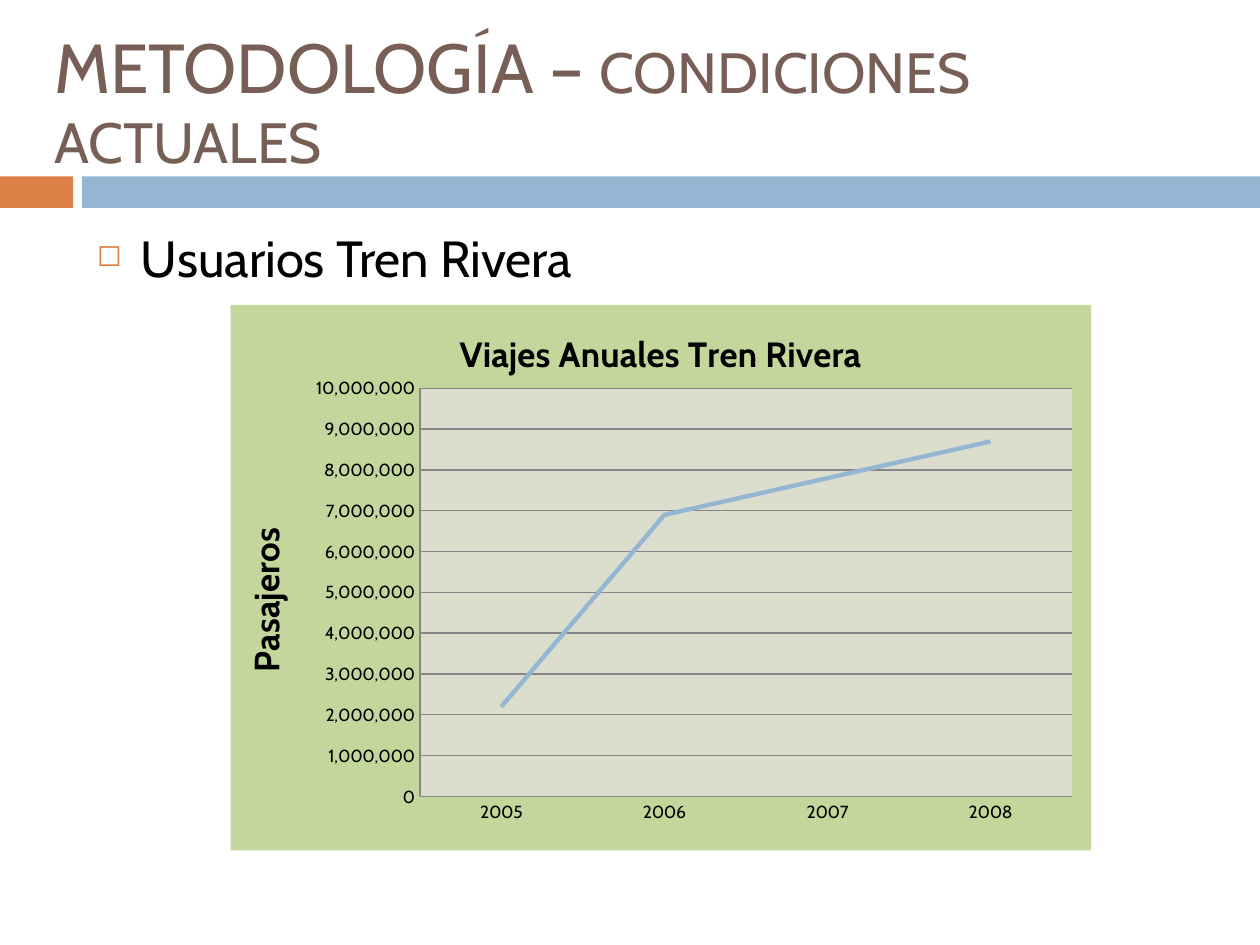
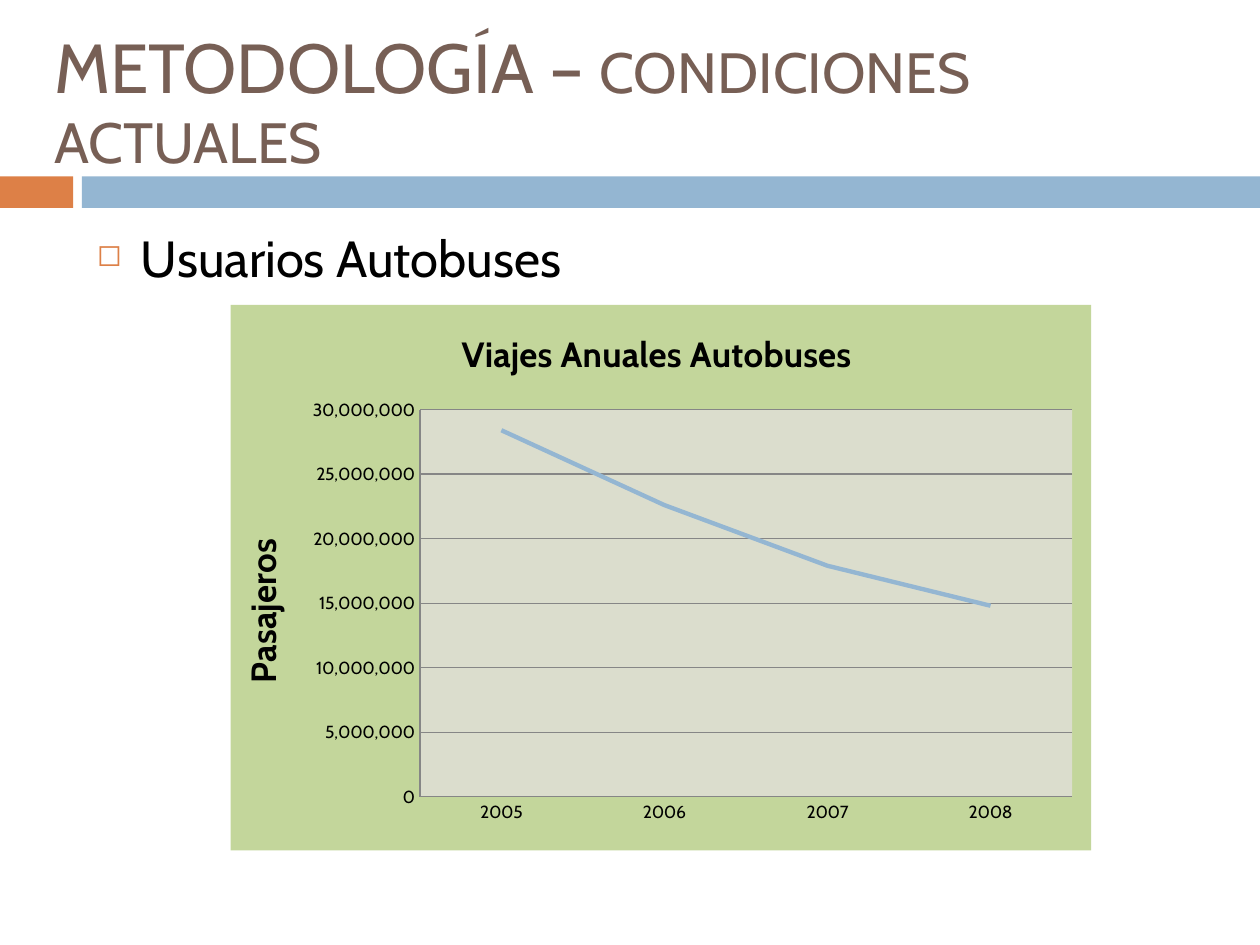
from lxml import etree
from pptx import Presentation
from pptx.chart.data import CategoryChartData as ChartData
from pptx.dml.color import RGBColor
from pptx.enum.chart import XL_CHART_TYPE as Kind, XL_TICK_MARK as Tick
from pptx.enum.shapes import MSO_SHAPE as Shape
from pptx.enum.text import MSO_ANCHOR as Anchor, MSO_AUTO_SIZE as Fit, PP_ALIGN as Align
from pptx.oxml import parse_xml
from pptx.oxml.ns import qn
from pptx.util import Inches, Pt

FONT = "Cabin"
BLACK, BROWN, GRAY = "000000", "775F55", "868686"
ORANGE, BLUE = "DD8047", "94B6D2"
GREEN, PLOT = "C3D69B", "DBDDCD"
NS = ('xmlns:c="http://schemas.openxmlformats.org/drawingml/2006/chart" '
      'xmlns:a="http://schemas.openxmlformats.org/drawingml/2006/main"')
YEARS = ["2005", "2006", "2007", "2008"]


def color(code):
    return RGBColor.from_string(code)


def box(*nums):
    return [Inches(n) for n in nums]


def area(code):
    """Borderless fill for a part of a chart."""
    return parse_xml(f'<c:spPr {NS}><a:solidFill><a:srgbClr val="{code}"/></a:solidFill>'
                     '<a:ln><a:noFill/></a:ln></c:spPr>')


class Deck:
    def __init__(self):
        self.prs = Presentation()
        self.prs.slide_width, self.prs.slide_height = box(10, 7.5)
        self.slide = None

    def style(self, font, size, code=BLACK, bold=False):
        font.name, font.size, font.bold = FONT, Pt(size), bold
        font.color.rgb = color(code)

    def start(self):
        self.slide = self.prs.slides.add_slide(self.prs.slide_layouts[5])
        self.band(0, 0.58, ORANGE)
        self.band(0.65, 9.35, BLUE)

    def band(self, left, width, code):
        bar = self.slide.shapes.add_shape(Shape.RECTANGLE, *box(left, 1.4, width, 0.25))
        bar.shadow.inherit = False
        bar.fill.solid()
        bar.fill.fore_color.rgb = color(code)
        bar.line.fill.background()

    def title(self, parts):
        shape = self.slide.shapes.title
        shape.left, shape.top, shape.width, shape.height = box(0.33, 0.25, 9.25, 1.08)
        frame = shape.text_frame
        frame.word_wrap, frame.auto_size = True, Fit.NONE
        frame.vertical_anchor = Anchor.MIDDLE
        para = frame.paragraphs[0]
        para.alignment = Align.LEFT
        for text, size in parts:
            run = para.add_run()
            run.text = text
            self.style(run.font, size, BROWN)

    def bullet(self, text):
        frame = self.slide.shapes.add_textbox(*box(0.67, 1.75, 8.92, 4.92)).text_frame
        frame.word_wrap = True
        frame.text = text
        para = frame.paragraphs[0]
        para.space_before = Pt(7)
        self.style(para.runs[0].font, 29)
        # Small orange square with a hanging indent
        props = para._p.get_or_add_pPr()
        props.set("marL", str(Inches(0.35)))
        props.set("indent", str(-Inches(0.35)))
        tint = etree.SubElement(props, qn("a:buClr"))
        etree.SubElement(tint, qn("a:srgbClr"), val=ORANGE)
        etree.SubElement(props, qn("a:buSzPct"), val="60000")
        etree.SubElement(props, qn("a:buChar"), char="◻")

    def label(self, owner, text):
        frame = owner.text_frame
        frame.text = text
        self.style(frame.paragraphs[0].runs[0].font, 20, bold=True)

    def chart(self, title, values, top, step, plot):
        data = ChartData(number_format="#,##0")
        data.categories = YEARS
        data.add_series("Pasajeros", values)
        chart = self.slide.shapes.add_chart(
            Kind.LINE, *box(1.83, 2.42, 6.83, 4.33), data).chart
        self.style(chart.font, 10)
        chart.has_legend = False
        chart.has_title = True
        self.label(chart.chart_title, title)

        # Axes
        rows = chart.value_axis
        self.label(rows.axis_title, "Pasajeros")
        rows.minimum_scale, rows.maximum_scale, rows.major_unit = 0, top, step
        rows.has_major_gridlines = True
        rows.tick_labels.number_format = "#,##0"
        rows.tick_labels.number_format_is_linked = False
        for axis in (rows, chart.category_axis):
            axis.major_tick_mark = axis.minor_tick_mark = Tick.NONE
        for part in (rows, chart.category_axis, rows.major_gridlines):
            part.format.line.color.rgb = color(GRAY)
            part.format.line.width = Pt(0.75)

        # Line
        chart.plots[0].vary_by_categories = False
        line = chart.plots[0].series[0]
        line.smooth = False
        line.format.line.color.rgb = color(BLUE)
        line.format.line.width = Pt(2.5)
        self.paint(chart, plot)

    def paint(self, chart, plot):
        """Fill the chart and fix the place of its plot."""
        body = chart._chartSpace.find(qn("c:chart"))
        body.addnext(area(GREEN))
        inner = body.find(qn("c:plotArea"))
        inner.append(area(PLOT))
        for old in inner.findall(qn("c:layout")):
            inner.remove(old)
        layout = etree.Element(qn("c:layout"))
        manual = etree.SubElement(layout, qn("c:manualLayout"))
        pairs = [("layoutTarget", "inner"), ("xMode", "edge"), ("yMode", "edge")]
        for name, val in pairs + list(zip("xywh", plot)):
            etree.SubElement(manual, qn("c:" + name), val=str(val))
        inner.insert(0, layout)


def main():
    deck = Deck()
    million = 1_000_000
    # Bullet, chart title, trips in millions, axis top, axis step, plot place
    pages = [
        ("Usuarios Tren Rivera", "Viajes Anuales Tren Rivera",
         (2.2, 6.9, 7.8, 8.7), 10, 1, (0.22, 0.153, 0.758, 0.748)),
        ("Usuarios Autobuses", "Viajes Anuales Autobuses ",
         (28.4, 22.6, 17.9, 14.8), 30, 5, (0.22, 0.192, 0.758, 0.71)),
    ]
    for topic, title, trips, top, step, plot in pages:
        deck.start()
        deck.title([("METODOLOGÍA – ", 39.6), ("CONDICIONES ACTUALES", 32.4)])
        deck.bullet(topic)
        deck.chart(title, [round(n * million) for n in trips],
                   top * million, step * million, plot)
    deck.prs.save("out.pptx")


if __name__ == "__main__":
    main()
